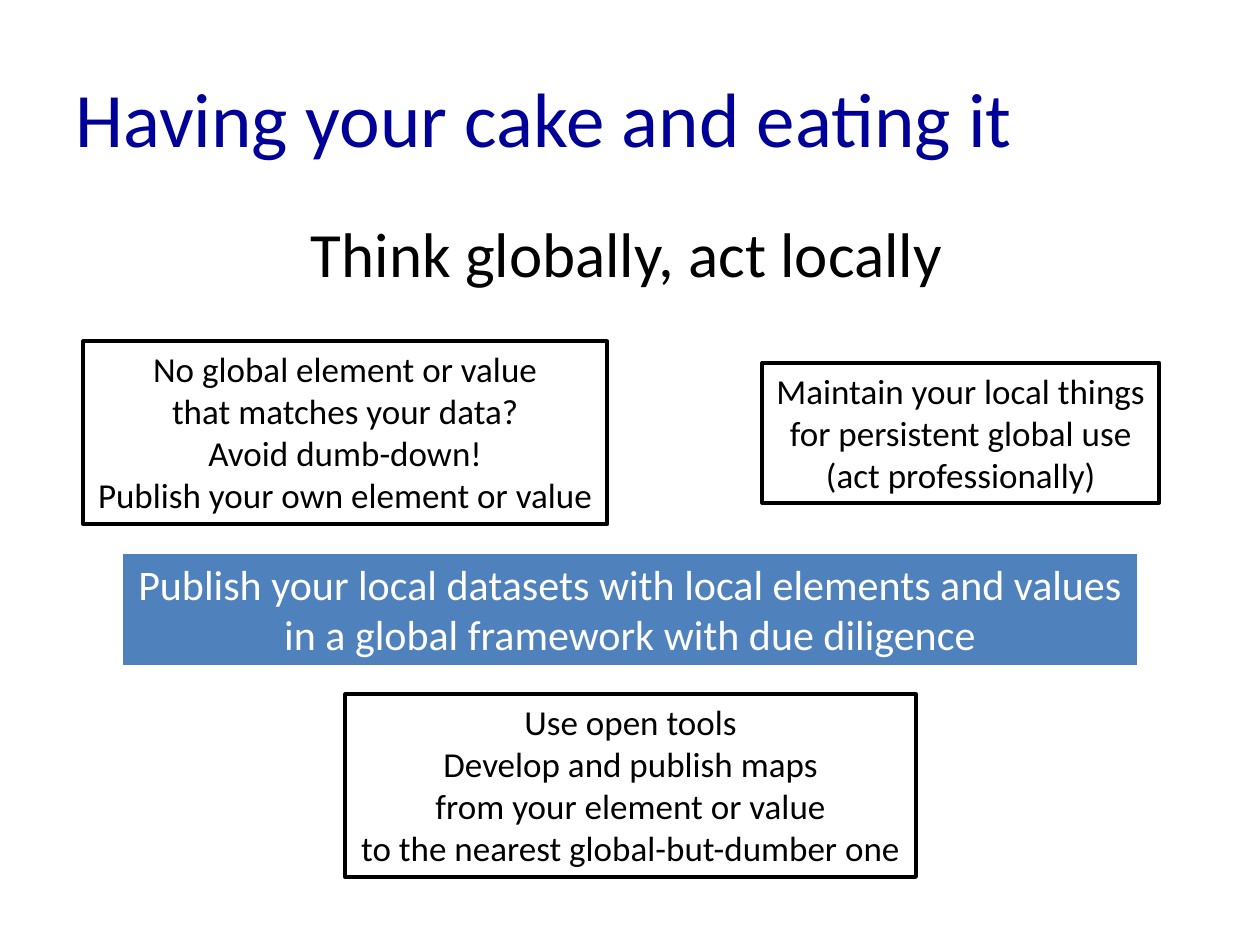
"""Build the slide on publishing local data in a global framework."""
import pptx
import pptx.dml.color
import pptx.enum.shapes
import pptx.enum.text
import pptx.util

Inches = pptx.util.Inches
Pt = pptx.util.Pt
ALIGN = pptx.enum.text.PP_ALIGN
ANCHOR = pptx.enum.text.MSO_ANCHOR

COLOURS = {"title": "000099", "ink": "000000", "paper": "FFFFFF", "banner": "4F81BD"}
FONT = "Calibri"

TITLE = "Having your cake and eating it"
TITLE_AREA = (0.5, 0.3, 9, 1.25)
MOTTO = "Think globally, act locally"
MOTTO_AREA = (2.37, 1.65, 5.26, 0.71)

ADVICE = [
    ((0.66, 2.71, 4.16, 1.45), [
        "No global element or value",
        "that matches your data?",
        "Avoid dumb-down!",
        "Publish your own element or value",
    ]),
    ((2.74, 5.51, 4.53, 1.45), [
        "Use open tools",
        "Develop and publish maps",
        "from your element or value",
        "to the nearest global-but-dumber one",
    ]),
    ((6.05, 2.88, 3.15, 1.11), [
        "Maintain your local things",
        "for persistent global use",
        "(act professionally)",
    ]),
]
BANNER_AREA = (0.96, 4.38, 8.08, 0.91)
BANNER = [
    "Publish your local datasets with local elements and values",
    "in a global framework with due diligence",
]


def colour(name):
    return pptx.dml.color.RGBColor.from_string(COLOURS[name])


def write(frame, lines, size, ink, align, anchor=ANCHOR.TOP, wrap=False):
    frame.word_wrap = wrap
    frame.vertical_anchor = anchor
    frame.text = "\n".join(lines)
    for para in frame.paragraphs:
        para.alignment = align
        para.font.name = FONT
        para.font.size = Pt(size)
        para.font.color.rgb = colour(ink)


def add_panel(page, area, lines, size, ink, line, fill=None):
    box = page.shapes.add_shape(
        pptx.enum.shapes.MSO_SHAPE.RECTANGLE, *map(Inches, area))
    box.shadow.inherit = False
    if fill:
        box.fill.solid()
        box.fill.fore_color.rgb = colour(fill)
    else:
        box.fill.background()
    box.line.color.rgb = colour(line)
    box.line.width = Pt(2.25)
    write(box.text_frame, lines, size, ink, ALIGN.CENTER)
    box.text_frame.auto_size = pptx.enum.text.MSO_AUTO_SIZE.SHAPE_TO_FIT_TEXT


def main():
    deck = pptx.Presentation()
    deck.slide_width, deck.slide_height = Inches(10), Inches(7.5)
    page = deck.slides.add_slide(deck.slide_layouts.get_by_name("Title Only"))

    title = page.shapes.title
    title.left, title.top, title.width, title.height = map(Inches, TITLE_AREA)
    write(title.text_frame, [TITLE], 44, "title", ALIGN.LEFT, ANCHOR.MIDDLE, True)

    motto = page.shapes.add_textbox(*map(Inches, MOTTO_AREA))
    write(motto.text_frame, [MOTTO], 36, "ink", ALIGN.LEFT)
    motto.text_frame.auto_size = pptx.enum.text.MSO_AUTO_SIZE.SHAPE_TO_FIT_TEXT

    for area, lines in ADVICE:
        add_panel(page, area, lines, 20, "ink", "ink")
    add_panel(page, BANNER_AREA, BANNER, 24, "paper", "paper", "banner")

    deck.save("out.pptx")


if __name__ == "__main__":
    main()
